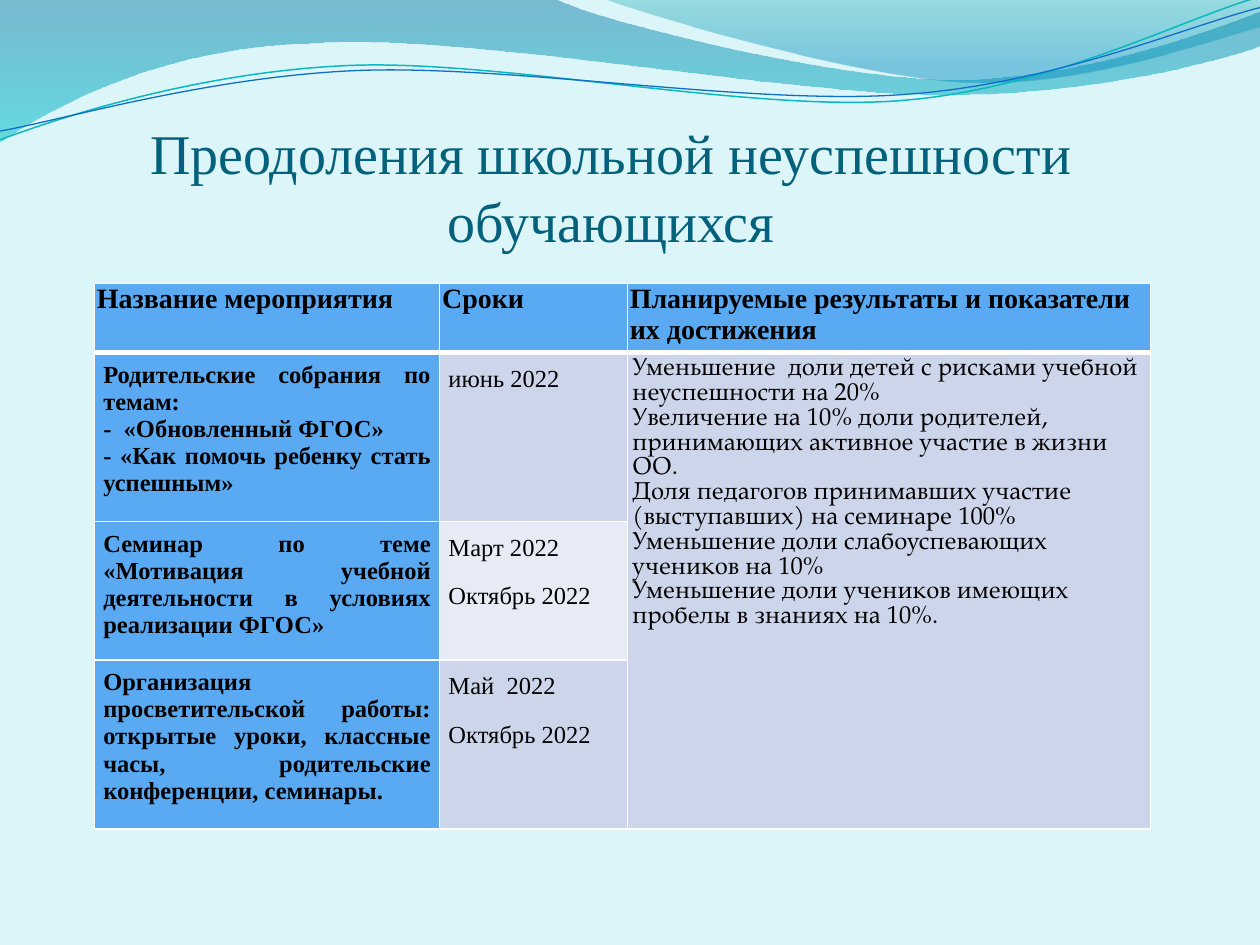
from math import cos, radians, sin

from lxml.etree import SubElement
from pptx import Presentation
from pptx.dml.color import RGBColor
from pptx.enum.text import MSO_ANCHOR, PP_ALIGN
from pptx.oxml import parse_xml
from pptx.oxml.ns import nsdecls, qn
from pptx.util import Inches, Pt

THEME = {
    "background": "DBF5F9", "title": "04617B", "text": "000000",
    "header": "59AAF2", "band": "CCD5EA", "light": "E7EBF5", "border": "FFFFFF",
    "serif": "Times New Roman", "book": "TeX Gyre Pagella",
    "title_size": 32, "header_size": 16, "body_size": 14,
}

TITLE = "Преодоления школьной неуспешности обучающихся"
HEADERS = ["Название мероприятия", "Сроки",
           "Планируемые результаты и показатели их достижения"]
EVENTS = [
    (["Родительские собрания по темам:", "-  «Обновленный ФГОС»",
      "- «Как помочь ребенку стать успешным»"], ["июнь 2022"]),
    (["Семинар по теме «Мотивация учебной деятельности в условиях реализации ФГОС»"],
     ["Март 2022", "Октябрь 2022"]),
    (["Организация просветительской работы: открытые уроки, классные часы, "
      "родительские конференции, семинары."], ["Май  2022", "Октябрь 2022"]),
]
RESULTS = [
    "Уменьшение  доли детей с рисками учебной неуспешности на 20%",
    "Увеличение на 10% доли родителей, принимающих активное участие в жизни ОО.",
    "Доля педагогов принимавших участие (выступавших) на семинаре 100%",
    "Уменьшение доли слабоуспевающих учеников на 10%",
    "Уменьшение доли учеников имеющих пробелы в знаниях на 10%.",
]
COLUMNS = [2.74, 1.49, 4.15]
ROWS = [0.55, 1.34, 1.1, 1.34]

# A pair is a straight step; six numbers are a Bezier step (two controls, end).
# Gradient stops are (position %, colour, opacity %).
WAVES = [
    {"steps": [(0, 0), (4.4, -0.01), (4.76, 0.17, 6.64, 0.63, 7.58, 0.63),
               (8.53, 0.63, 9.58, 0.26, 10, 0.09), (10.01, 0.36),
               (9.83, 0.44, 8.7, 0.76, 7.46, 0.75),
               (6.22, 0.75, 3.82, 0.28, 2.57, 0.34),
               (1.29, 0.36, 0.46, 0.83, -0.01, 1.13)],
     "stops": [(0, "0074A1", 45), (100, "00C6CF", 55)]},
    {"steps": [(4.79, -0.01), (5.09, 0.11, 6.82, 0.62, 7.69, 0.65),
               (8.56, 0.69, 9.61, 0.32, 10, 0.21), (10, 0)],
     "stops": [(0, "00A1A9", 30), (80, "008BBF", 45)]},
    {"steps": [(0, 1.11), (0.48, 0.93, 1.58, 0.57, 2.77, 0.52),
               (3.95, 0.47, 5.93, 0.89, 7.13, 0.8),
               (8.33, 0.71, 9.38, 0.15, 9.98, -0.02)],
     "line": ("0AB8BF", 0.85), "tilt": -2.7},
    {"steps": [(0, 1.04), (0.47, 0.96, 1.64, 0.61, 2.83, 0.56),
               (4.03, 0.51, 5.97, 0.84, 7.17, 0.75),
               (8.36, 0.67, 9.41, 0.21, 10, 0.06)],
     "line": ("0F6FC6", 0.75), "tilt": -2.7},
]
PIVOT = (4.99, 0.58)


def color(name):
    return RGBColor.from_string(THEME.get(name, name))


def level(point, tilt):
    """Undo the tilt of a point around the pivot, in EMU."""
    x, y = point[0] - PIVOT[0], point[1] - PIVOT[1]
    angle = radians(-tilt)
    return (Inches(PIVOT[0] + x * cos(angle) - y * sin(angle)),
            Inches(PIVOT[1] + x * sin(angle) + y * cos(angle)))


def add_outline(page, steps, tilt):
    """Build straight segments, then turn the Bezier steps into real curves."""
    steps = [[level(step[i:i + 2], tilt) for i in range(0, len(step), 2)] for step in steps]
    ends = [step[-1] for step in steps]
    builder = page.shapes.build_freeform(*ends[0])
    builder.add_line_segments(ends[1:], close=not tilt)
    wave = builder.convert_to_shape()
    left, top = (min(axis) for axis in zip(*ends))
    segments = list(wave.element.iter(qn("a:lnTo")))
    for segment, step in zip(segments, steps[1:]):
        if len(step) == 3:
            points = "".join(f'<a:pt x="{x - left}" y="{y - top}"/>' for x, y in step)
            curve = parse_xml(f'<a:cubicBezTo {nsdecls("a")}>{points}</a:cubicBezTo>')
            segment.getparent().replace(segment, curve)
    wave.rotation = tilt
    return wave


def add_wave(page, steps, stops=None, line=None, tilt=0):
    wave = add_outline(page, steps, tilt)
    wave.shadow.inherit = False
    wave.fill.background()
    if line:
        wave.line.color.rgb = color(line[0])
        wave.line.width = Pt(line[1])
        return
    wave.line.fill.background()
    marks = "".join(
        f'<a:gs pos="{at * 1000}"><a:srgbClr val="{tone}">'
        f'<a:alpha val="{opacity * 1000}"/></a:srgbClr></a:gs>'
        for at, tone, opacity in stops)
    gradient = parse_xml(f'<a:gradFill {nsdecls("a")}><a:gsLst>{marks}</a:gsLst>'
                         '<a:lin ang="5400000" scaled="0"/></a:gradFill>')
    properties = wave.element.spPr
    properties.replace(properties.find(qn("a:noFill")), gradient)


def write(frame, texts, font, tone="text", **paragraph_format):
    for index, text in enumerate(texts):
        para = frame.paragraphs[0] if index == 0 else frame.add_paragraph()
        for name, value in paragraph_format.items():
            setattr(para, name, value)
        span = para.add_run()
        span.text = text
        for name, value in font.items():
            setattr(span.font, name, value)
        span.font.color.rgb = color(tone)


def set_borders(cell, **widths):
    properties = cell._tc.get_or_add_tcPr()
    for index, side in enumerate("LRTB"):
        border = SubElement(properties, qn(f"a:ln{side}"), w=str(Pt(widths.get(side, 1))))
        fill = SubElement(border, qn("a:solidFill"))
        SubElement(fill, qn("a:srgbClr"), val=THEME["border"])
        properties.insert(index, border)


def fill_cell(cell, texts, font, margins, **paragraph_format):
    for side, margin in zip(("left", "right", "top", "bottom"),
                            (margins[0], margins[0], margins[1], margins[1])):
        setattr(cell, f"margin_{side}", Inches(margin))
    write(cell.text_frame, texts, font, **paragraph_format)


def add_plan(page):
    table = page.shapes.add_table(len(ROWS), len(COLUMNS), Inches(0.75), Inches(2.25),
                                  Inches(sum(COLUMNS)), Inches(sum(ROWS))).table
    for column, width in zip(table.columns, COLUMNS):
        column.width = Inches(width)
    for row, height in zip(table.rows, ROWS):
        row.height = Inches(height)
    for r in range(len(ROWS)):
        for c in range(len(COLUMNS)):
            cell = table.cell(r, c)
            tone = "header" if r == 0 or c == 0 else "light" if (r, c) == (2, 1) else "band"
            cell.fill.solid()
            cell.fill.fore_color.rgb = color(tone)
            set_borders(cell, **({"B": 3} if r == 0 else {"T": 3} if r == 1 else {}))
    table.cell(1, 2).merge(table.cell(3, 2))

    body = {"name": THEME["serif"], "size": Pt(THEME["body_size"]), "bold": False}
    strong = {**body, "bold": True}
    heading = {**strong, "size": Pt(THEME["header_size"])}
    for c, text in enumerate(HEADERS):
        fill_cell(table.cell(0, c), [text], heading, (0.02, 0), alignment=PP_ALIGN.LEFT)
    for r, (event, dates) in enumerate(EVENTS, 1):
        fill_cell(table.cell(r, 0), event, strong, (0.07, 0.07), alignment=PP_ALIGN.JUSTIFY)
        fill_cell(table.cell(r, 1), dates, body, (0.07, 0.07), alignment=PP_ALIGN.JUSTIFY,
                  line_spacing=1.15, space_after=Pt(10))
    fill_cell(table.cell(1, 2), RESULTS, {**body, "name": THEME["book"]}, (0.04, 0.04),
              alignment=PP_ALIGN.LEFT)


def add_title(page):
    title = page.shapes.title
    frame = title.text_frame
    for target, lengths in (
            (title, {"left": 0.35, "top": 0.99, "width": 9, "height": 1.02}),
            (frame, {"margin_left": 0, "margin_right": 0,
                     "margin_top": 0.05, "margin_bottom": 0})):
        for name, value in lengths.items():
            setattr(target, name, Inches(value))
    frame.word_wrap = True
    frame.vertical_anchor = MSO_ANCHOR.BOTTOM
    write(frame, [TITLE], {"name": THEME["serif"], "size": Pt(THEME["title_size"])},
          "title", alignment=PP_ALIGN.CENTER)


def main():
    deck = Presentation()
    deck.slide_width, deck.slide_height = Inches(10), Inches(7.5)
    page = deck.slides.add_slide(deck.slide_layouts[5])
    page.background.fill.solid()
    page.background.fill.fore_color.rgb = color("background")
    for wave in WAVES:
        add_wave(page, **wave)
    add_title(page)
    add_plan(page)
    deck.save("out.pptx")


if __name__ == "__main__":
    main()
